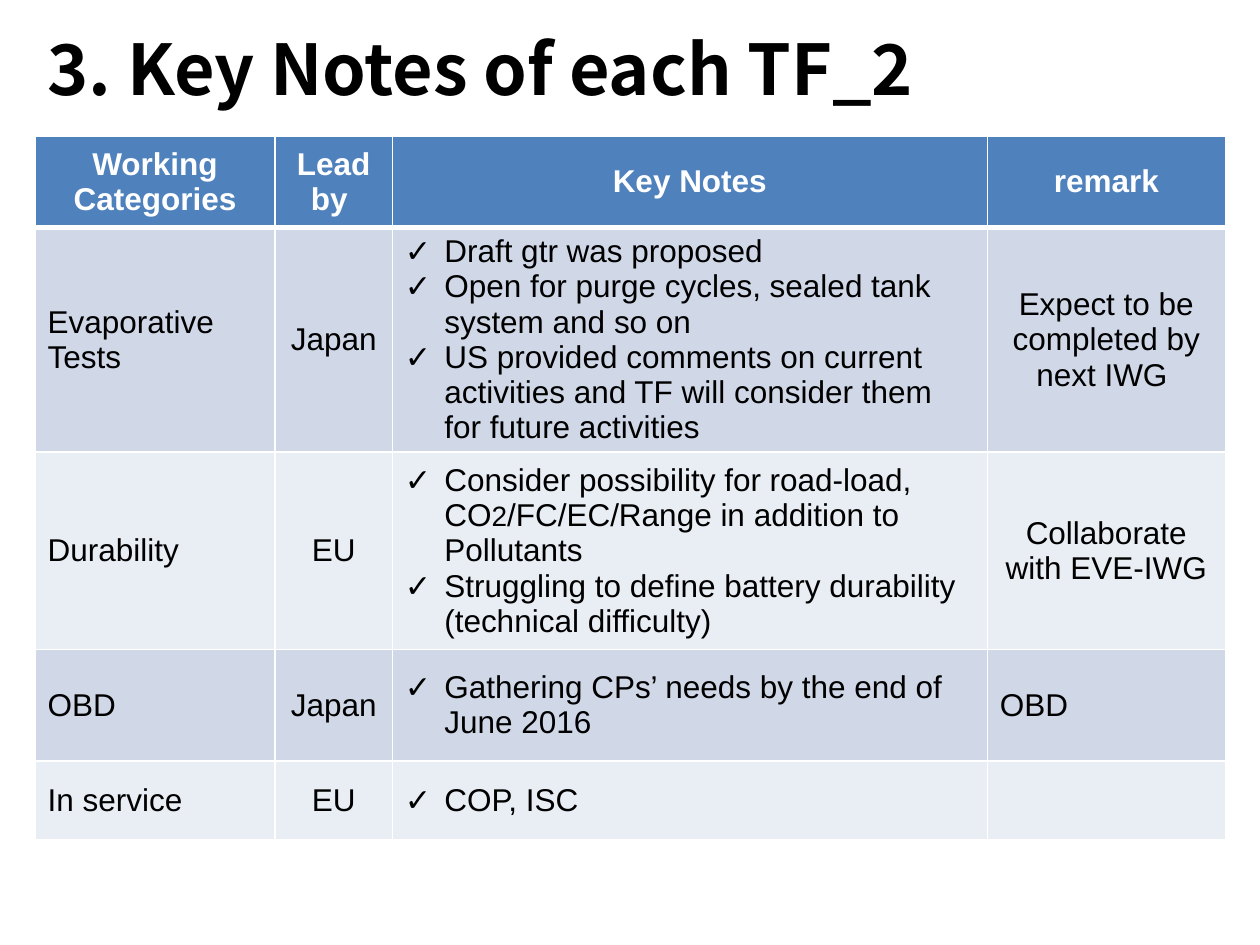
from lxml.etree import SubElement
from pptx import Presentation
from pptx.dml.color import RGBColor
from pptx.enum.text import MSO_ANCHOR as Anchor, MSO_AUTO_SIZE as AutoSize, PP_ALIGN as Align
from pptx.oxml.ns import qn
from pptx.util import Pt


def style(run, size, color, bold=False, font="Arial"):
    run.font.size, run.font.bold, run.font.name = Pt(size), bold, font
    run.font.color.rgb = RGBColor.from_string(color)


def add_border(cell, side, width):
    line = SubElement(cell._tc.get_or_add_tcPr(), qn(f"a:ln{side}"), w=str(Pt(width)))
    SubElement(SubElement(line, qn("a:solidFill")), qn("a:srgbClr"), val="FFFFFF")


prs = Presentation()
prs.slide_width, prs.slide_height = Pt(720), Pt(540)
slide = prs.slides.add_slide(prs.slide_layouts[6])

# Table content: one line per paragraph
HEADER = ["Working\nCategories", "Lead by ", "Key Notes", "remark"]
TASK_FORCES = [
    ["Evaporative Tests", "Japan",
     "Draft gtr was proposed\n"
     "Open for purge cycles, sealed tank system and so on\n"
     "US provided comments on current activities and TF will consider them for future activities",
     "Expect to be completed by next IWG "],
    ["Durability", "EU",
     "Consider possibility for road-load, CO2/FC/EC/Range in addition to Pollutants\n"
     "Struggling to define battery durability (technical difficulty)",
     "Collaborate with EVE-IWG"],
    ["OBD", "Japan", "Gathering CPs’ needs by the end of June 2016", "OBD"],
    ["In service", "EU", "COP, ISC", ""],
]
COLUMN_WIDTHS = [137.2, 67, 340, 136]
ROW_HEIGHTS = [52.3, 72.6, 113, 63.5, 45]
KEY_NOTES = 2

notes_table = slide.shapes.add_table(
    len(ROW_HEIGHTS), len(COLUMN_WIDTHS), Pt(20), Pt(77.8),
    Pt(sum(COLUMN_WIDTHS)), Pt(sum(ROW_HEIGHTS))).table
for column, width in zip(notes_table.columns, COLUMN_WIDTHS):
    column.width = Pt(width)
for row, height in zip(notes_table.rows, ROW_HEIGHTS):
    row.height = Pt(height)

for r, texts in enumerate([HEADER] + TASK_FORCES):
    is_header = r == 0
    for c, text in enumerate(texts):
        cell = notes_table.cell(r, c)
        # White grid, heavier under the header
        for side, width in [("L", 1), ("R", 1), ("T", 3 if r == 1 else 1),
                            ("B", 3 if is_header else 1)]:
            add_border(cell, side, width)
        cell.fill.solid()
        fill = "4F81BD" if is_header else "D0D8E8" if r % 2 else "E9EDF4"
        cell.fill.fore_color.rgb = RGBColor.from_string(fill)
        cell.vertical_anchor = Anchor.MIDDLE

        cell.text_frame.text = text
        centered = is_header or c == 1 or (c == 3 and text != "OBD")
        for paragraph in cell.text_frame.paragraphs:
            paragraph.alignment = Align.CENTER if centered else Align.LEFT
            # Check-mark bullets in the key notes
            if c == KEY_NOTES and not is_header:
                props = paragraph._p.get_or_add_pPr()
                props.set("marL", str(Pt(22.5)))
                props.set("indent", str(-Pt(22.5)))
                SubElement(props, qn("a:buFont"), typeface="Arial")
                SubElement(props, qn("a:buChar"), char="✓")
            # The 2 of CO2 is a smaller run of its own
            if "CO2" in paragraph.text:
                before, after = paragraph.text.split("CO2")
                paragraph.runs[0].text = before + "CO"
                paragraph.add_run().text = "2"
                paragraph.add_run().text = after
            for run in paragraph.runs:
                style(run, 16 if run.text == "2" else 18,
                      "FFFFFF" if is_header else "000000", is_header)

# Title
title = slide.shapes.add_textbox(Pt(20), Pt(10.8), Pt(586), Pt(55.4)).text_frame
title.word_wrap = False
title.auto_size = AutoSize.SHAPE_TO_FIT_TEXT
title.text = "3. Key Notes of each TF_2"
style(title.paragraphs[0].runs[0], 40, "000000", True, "Noto Sans CJK JP")

prs.save("out.pptx")
